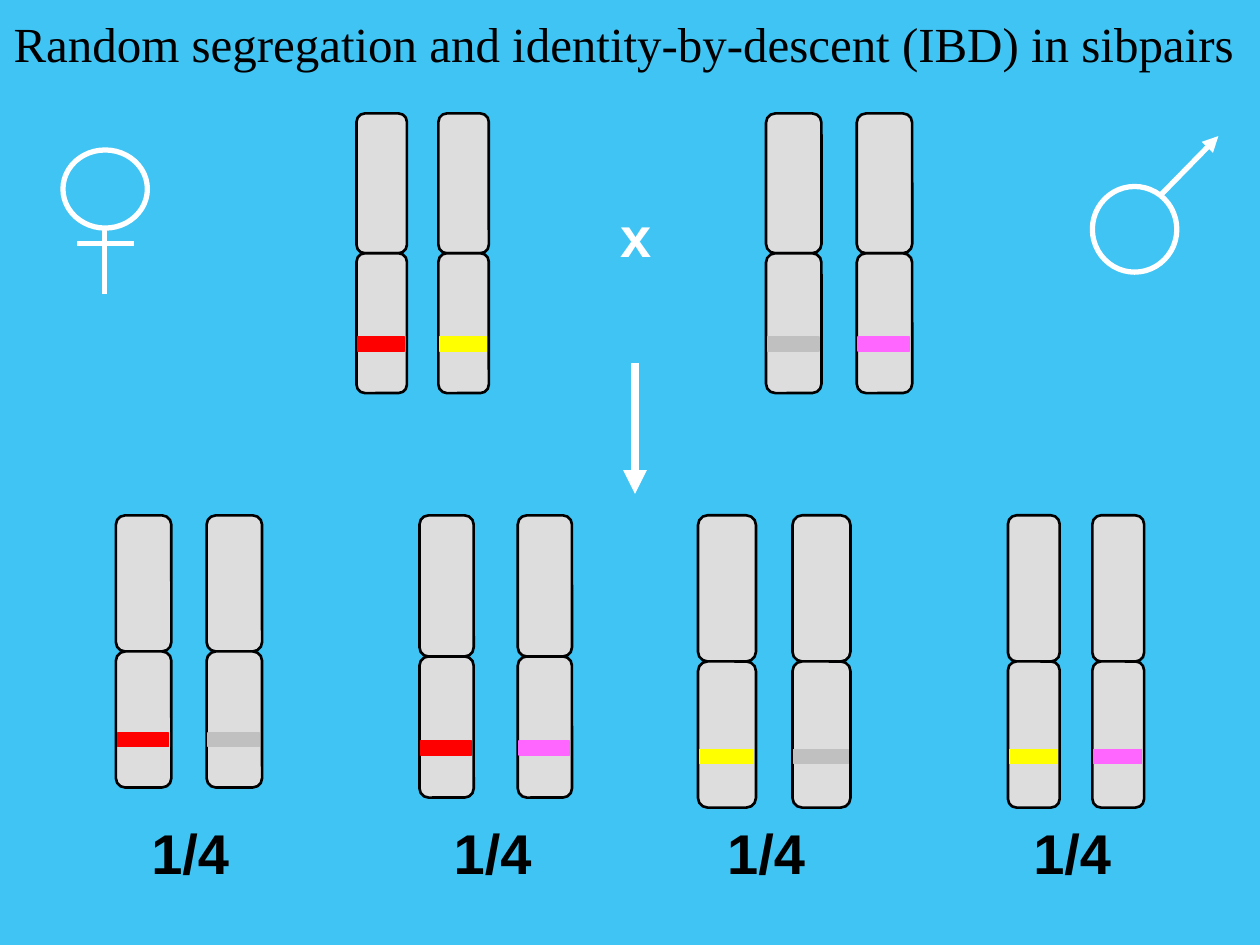
import pptx
import pptx.util
import pptx.dml.color
import pptx.enum.shapes
import pptx.enum.text
import pptx.oxml
import pptx.oxml.ns
from dataclasses import dataclass

Inches = pptx.util.Inches
Shapes = pptx.enum.shapes.MSO_SHAPE


@dataclass(frozen=True)
class Theme:
    background: str = "40C4F4"
    chromosome: str = "DDDDDD"
    ink: str = "000000"
    white: str = "FFFFFF"
    red: str = "FF0000"
    yellow: str = "FFFF00"
    gray: str = "C0C0C0"
    pink: str = "FF66FF"
    title_size: int = 28
    label_size: int = 32


theme = Theme()
rgb = pptx.dml.color.RGBColor.from_string

presentation = pptx.Presentation()
presentation.slide_width = Inches(10)
presentation.slide_height = Inches(7.5)
slide = presentation.slides.add_slide(presentation.slide_layouts[6])
slide.background.fill.solid()
slide.background.fill.fore_color.rgb = rgb(theme.background)


def add_text(text, left, top, width, height, *, size=theme.label_size,
             font="Arial", color=theme.ink, bold=True,
             align=pptx.enum.text.PP_ALIGN.CENTER,
             anchor=pptx.enum.text.MSO_ANCHOR.MIDDLE):
    box = slide.shapes.add_textbox(Inches(left), Inches(top), Inches(width), Inches(height))
    frame = box.text_frame
    frame.word_wrap = False
    frame.vertical_anchor = anchor
    paragraph = frame.paragraphs[0]
    paragraph.alignment = align
    run = paragraph.add_run()
    run.text = text
    run.font.size = pptx.util.Pt(size)
    run.font.name = font
    run.font.bold = bold
    run.font.color.rgb = rgb(color)


def add_outline(shapes, kind, box, *, line, weight, fill=None, arrow=False):
    """Add a preset shape (left, top, width, height) or, with kind None, a line (x1, y1, x2, y2)."""
    lengths = [Inches(value) for value in box]
    if kind is None:
        shape = shapes.add_connector(pptx.enum.shapes.MSO_CONNECTOR.STRAIGHT, *lengths)
        properties = shape.element.spPr
    else:
        shape = shapes.add_shape(kind, *lengths)
        shape.shadow.inherit = False
        if fill:
            shape.fill.solid()
            shape.fill.fore_color.rgb = rgb(fill)
        else:
            shape.fill.background()
    shape.line.color.rgb = rgb(line)
    shape.line.width = pptx.util.Pt(weight)
    if kind is None:
        namespace = pptx.oxml.ns.nsdecls("a")
        if arrow:
            shape.line._get_or_add_ln().append(
                pptx.oxml.parse_xml(f'<a:tailEnd {namespace} type="triangle"/>'))
        properties.append(pptx.oxml.parse_xml(f"<a:effectLst {namespace}/>"))


# Chromosome pairs: both lefts, top, width, arm height, band colours
pairs = [
    (2.83, 3.48, 0.9, 0.4, 1.11, theme.red, theme.yellow),
    (6.08, 6.8, 0.9, 0.44, 1.11, theme.gray, theme.pink),
    (5.54, 6.29, 4.09, 0.46, 1.16, theme.yellow, theme.gray),
    (8, 8.67, 4.09, 0.41, 1.16, theme.yellow, theme.pink),
    (3.33, 4.11, 4.09, 0.43, 1.12, theme.red, theme.pink),
    (0.92, 1.64, 4.09, 0.44, 1.08, theme.red, theme.gray),
]
for left_one, left_two, top, width, arm, color_one, color_two in pairs:
    for left, color in ((left_one, color_one), (left_two, color_two)):
        for arm_top in (top, top + arm):
            add_outline(slide.shapes, Shapes.ROUNDED_RECTANGLE, (left, arm_top, width, arm),
                        line=theme.ink, weight=1.5, fill=theme.chromosome)
        band = (left + 0.01, top + 1.6 * arm, width - 0.03, 0.1 * arm)
        add_outline(slide.shapes, Shapes.RECTANGLE, band, line=color, weight=0.75, fill=color)

# Cross sign and the probability under each child
add_text("x", 4.82, 1.55, 0.45, 0.63, color=theme.white)
for left in (1.1, 3.5, 5.67, 8.1):
    add_text("1/4", left, 6.45, 0.82, 0.63)

# Arrow from parents to children
add_outline(slide.shapes, None, (5.04, 2.88, 5.04, 3.92),
            line=theme.white, weight=4.5, arrow=True)

# Female symbol
female = slide.shapes.add_group_shape().shapes
add_outline(female, Shapes.OVAL, (0.5, 1.19, 0.67, 0.62), line=theme.white, weight=3)
for ends in ((0.83, 1.81, 0.83, 2.33), (0.61, 1.93, 1.06, 1.93)):
    add_outline(female, None, ends, line=theme.white, weight=3)

# Male symbol
male = slide.shapes.add_group_shape().shapes
add_outline(male, Shapes.OVAL, (8.67, 1.48, 0.67, 0.68), line=theme.white, weight=3)
add_outline(male, None, (9.22, 1.54, 9.67, 1.08), line=theme.white, weight=3, arrow=True)

# Title
add_text("Random segregation and identity-by-descent (IBD) in sibpairs",
         0.01, 0.06, 9.99, 0.57, size=theme.title_size, font="Times New Roman", bold=False,
         align=pptx.enum.text.PP_ALIGN.LEFT, anchor=pptx.enum.text.MSO_ANCHOR.TOP)

presentation.save("out.pptx")
